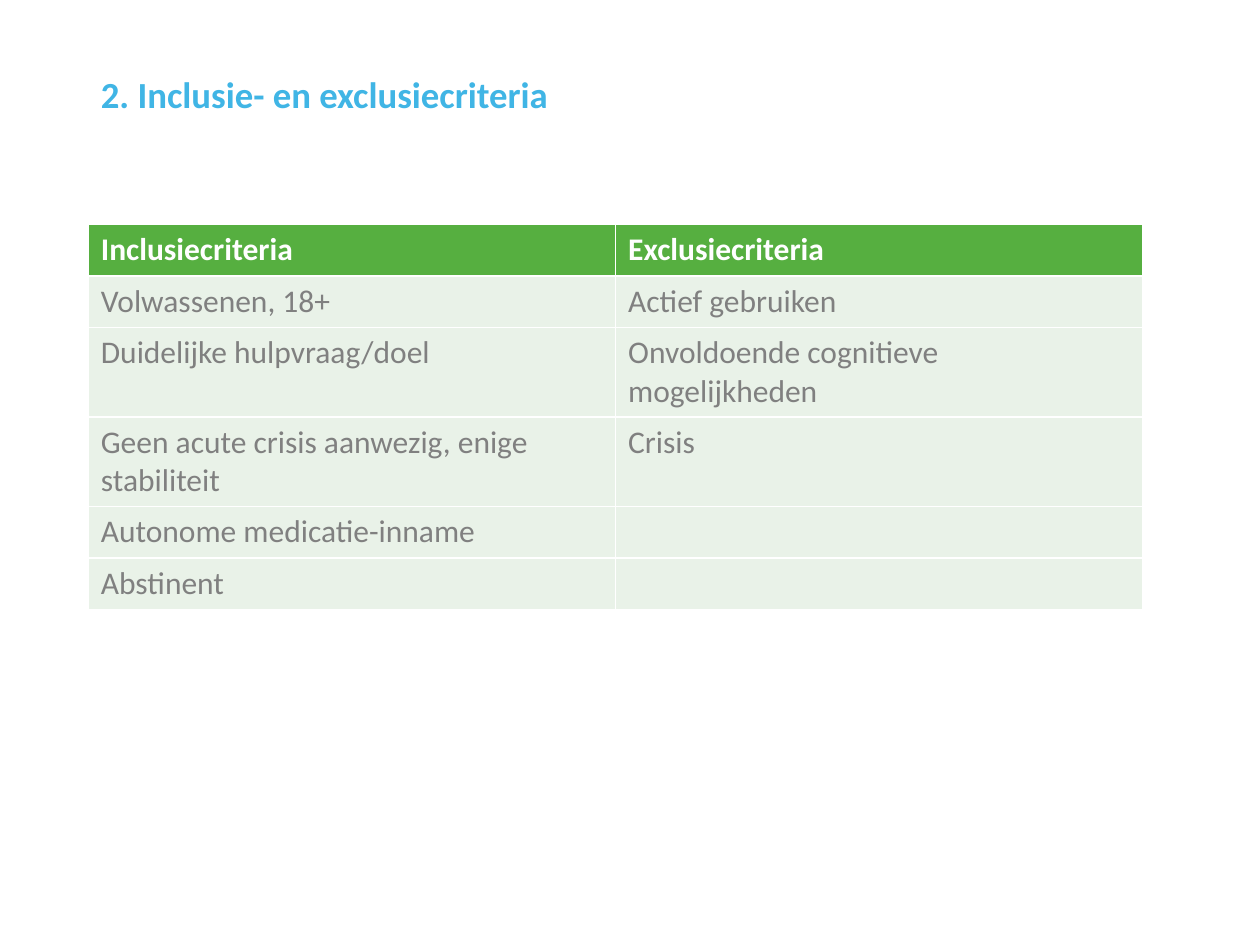
import pptx
import pptx.dml.color
import pptx.enum.text
import pptx.util
from pptx.util import Cm

COLORS = {
    "title": "40B5E5",
    "header": "56AF40",
    "header_text": "FFFFFF",
    "row": "E9F2E8",
    "row_text": "808080",
}

CRITERIA = [
    ("Inclusiecriteria", "Exclusiecriteria"),
    ("Volwassenen, 18+", "Actief gebruiken"),
    ("Duidelijke hulpvraag/doel", "Onvoldoende cognitieve mogelijkheden"),
    ("Geen acute crisis aanwezig, enige stabiliteit", "Crisis"),
    ("Autonome medicatie-inname", ""),
    ("Abstinent", ""),
]


def rgb(name):
    return pptx.dml.color.RGBColor.from_string(COLORS[name])


def write(tf, text, *, size, color, bold=False, font="Calibri", spacing=None):
    p = tf.paragraphs[0]
    p.alignment = pptx.enum.text.PP_ALIGN.LEFT
    p.line_spacing = spacing
    if not text:
        p.font.size = pptx.util.Pt(size)
        return
    r = p.add_run()
    r.text = text
    r.font.name = font
    r.font.size = pptx.util.Pt(size)
    r.font.bold = bold
    r.font.color.rgb = rgb(color)


class Deck:
    """Holds the shared style and the current slide."""

    left, width = Cm(1.78), Cm(21.26)
    title_size, table_size = 21, 18

    def __init__(self, prs):
        self.s = prs.slides.add_slide(prs.slide_layouts[5])

    def title(self, text, top, height):
        sp = self.s.shapes.title
        sp.left, sp.top, sp.width, sp.height = self.left, top, self.width, height
        tf = sp.text_frame
        tf.word_wrap = True
        tf.vertical_anchor = pptx.enum.text.MSO_ANCHOR.TOP
        write(tf, text, size=self.title_size, color="title", bold=True, spacing=0.9)

    def table(self, rows, top, row_height):
        """Add a table whose first row is the header."""
        frame = self.s.shapes.add_table(
            len(rows), len(rows[0]), self.left, top, self.width, row_height * len(rows)
        )
        table = frame.table
        table.horz_banding = False
        for i, texts in enumerate(rows):
            kind = "row" if i else "header"
            for j, text in enumerate(texts):
                cell = table.cell(i, j)
                cell.fill.solid()
                cell.fill.fore_color.rgb = rgb(kind)
                write(cell.text_frame, text, size=self.table_size,
                      color=kind + "_text", bold=i == 0)


def main():
    prs = pptx.Presentation()
    prs.slide_width, prs.slide_height = Cm(25.4), Cm(19.05)
    deck = Deck(prs)
    deck.title("2. Inclusie- en exclusiecriteria", top=Cm(1.42), height=Cm(2.31))
    deck.table(CRITERIA, top=Cm(4.52), row_height=Cm(1.04))
    prs.save("out.pptx")


if __name__ == "__main__":
    main()
